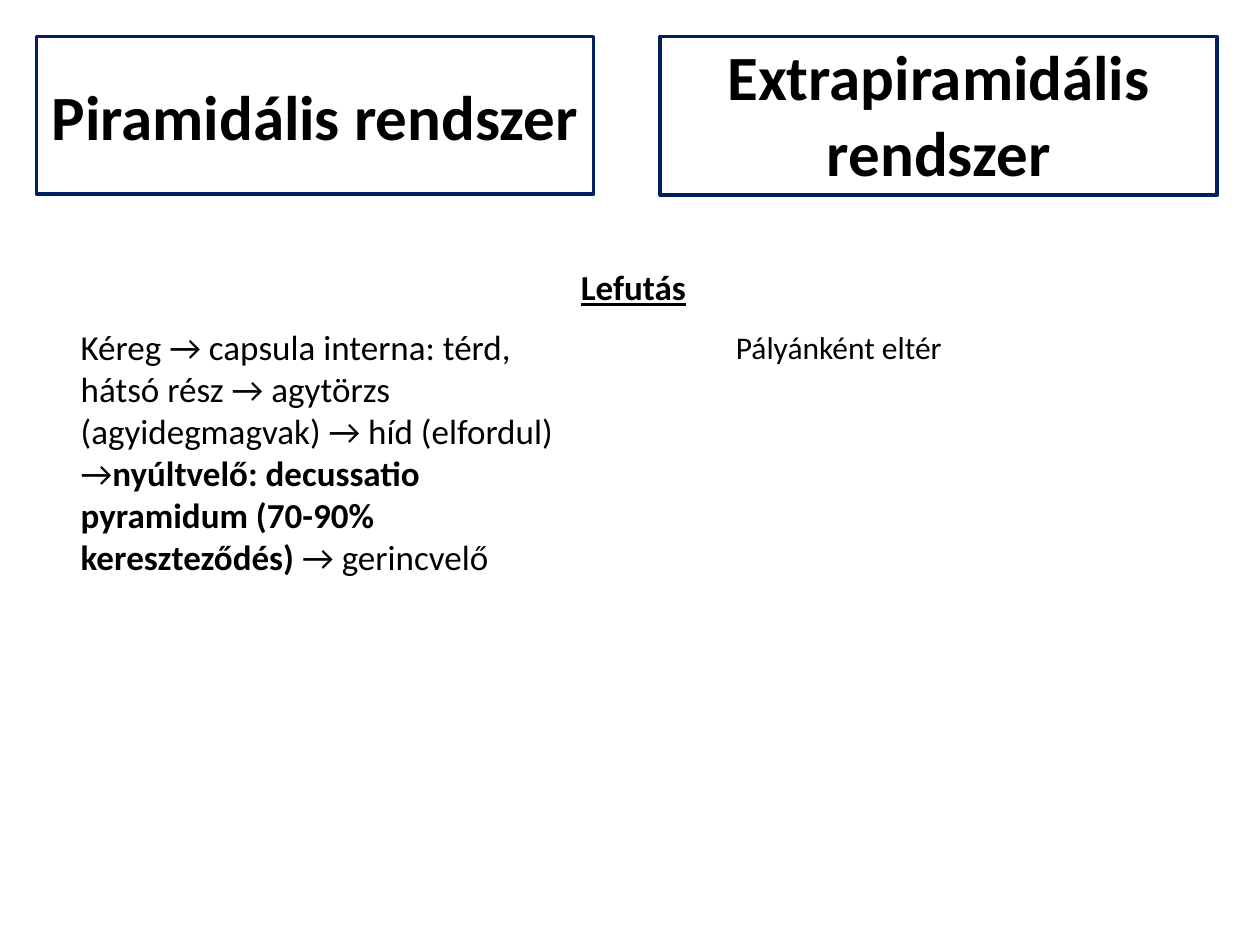
import pptx
import pptx.util
import pptx.dml.color
import pptx.enum.text
import lxml.etree

deck = pptx.Presentation()
deck.slide_width = pptx.util.Inches(10)
deck.slide_height = pptx.util.Inches(7.5)
slide = deck.slides.add_slide(deck.slide_layouts[4])
holders = {h.placeholder_format.idx: h for h in slide.placeholders}

Align = pptx.enum.text.PP_ALIGN
Anchor = pptx.enum.text.MSO_ANCHOR
DRAW = "{http://schemas.openxmlformats.org/drawingml/2006/main}"


def color(code):
    return pptx.dml.color.RGBColor.from_string(code)


def fill(idx, box, runs, size, align, anchor, indent):
    """Place a placeholder and write its single paragraph, run by run."""
    shape = holders[idx]
    shape.left, shape.top, shape.width, shape.height = map(pptx.util.Inches, box)
    frame = shape.text_frame
    frame.word_wrap = True
    frame.auto_size = pptx.enum.text.MSO_AUTO_SIZE.NONE
    frame.vertical_anchor = anchor
    para = frame.paragraphs[0]
    para.alignment = align
    para.space_before = pptx.util.Pt(0)
    props = para._p.get_or_add_pPr()
    props.set("marL", str(pptx.util.Inches(indent)))
    props.set("indent", "0")
    lxml.etree.SubElement(props, DRAW + "buNone")
    for text, bold, under in runs:
        run = para.add_run()
        run.text = text
        font = run.font
        font.name, font.size = "Calibri", pptx.util.Pt(size)
        font.bold, font.underline = bold, under
        font.color.rgb = color("000000")
    return shape


# Two columns
left, right = 0.29, 5.24
top, wide = 0.29, 4.42

# Framed headings
heads = [
    (0, left, 1.25, "Piramidális rendszer", Anchor.MIDDLE),
    (3, right, 1.26, "Extrapiramidális rendszer", Anchor.BOTTOM),
]
for idx, x, high, text, anchor in heads:
    head = fill(idx, (x, top, wide, high), [(text, True, False)],
                36, Align.CENTER, anchor, 0)
    head.line.color.rgb = color("002060")
    head.line.width = pptx.util.Pt(2)

# Shared topic and the text of each column
course = [
    ("Kéreg → capsula interna: térd, hátsó rész → agytörzs "
     "(agyidegmagvak) → híd (elfordul) →", False, False),
    ("nyúltvelő: decussatio pyramidum (70-90% kereszteződés) ", True, False),
    ("→ gerincvelő", False, False),
]
notes = [
    (1, (4.01, 2.06, 2.46, 0.47), [("Lefutás", True, True)], 20),
    (2, (0.04, 2.53, 4.66, 0.67), course, 20),
    (4, (right, 2.55, 4.66, 0.67), [("Pályánként eltér", False, False)], 18),
]
for idx, box, runs, size in notes:
    fill(idx, box, runs, size, Align.LEFT, Anchor.TOP, 0.5)

deck.save("out.pptx")
